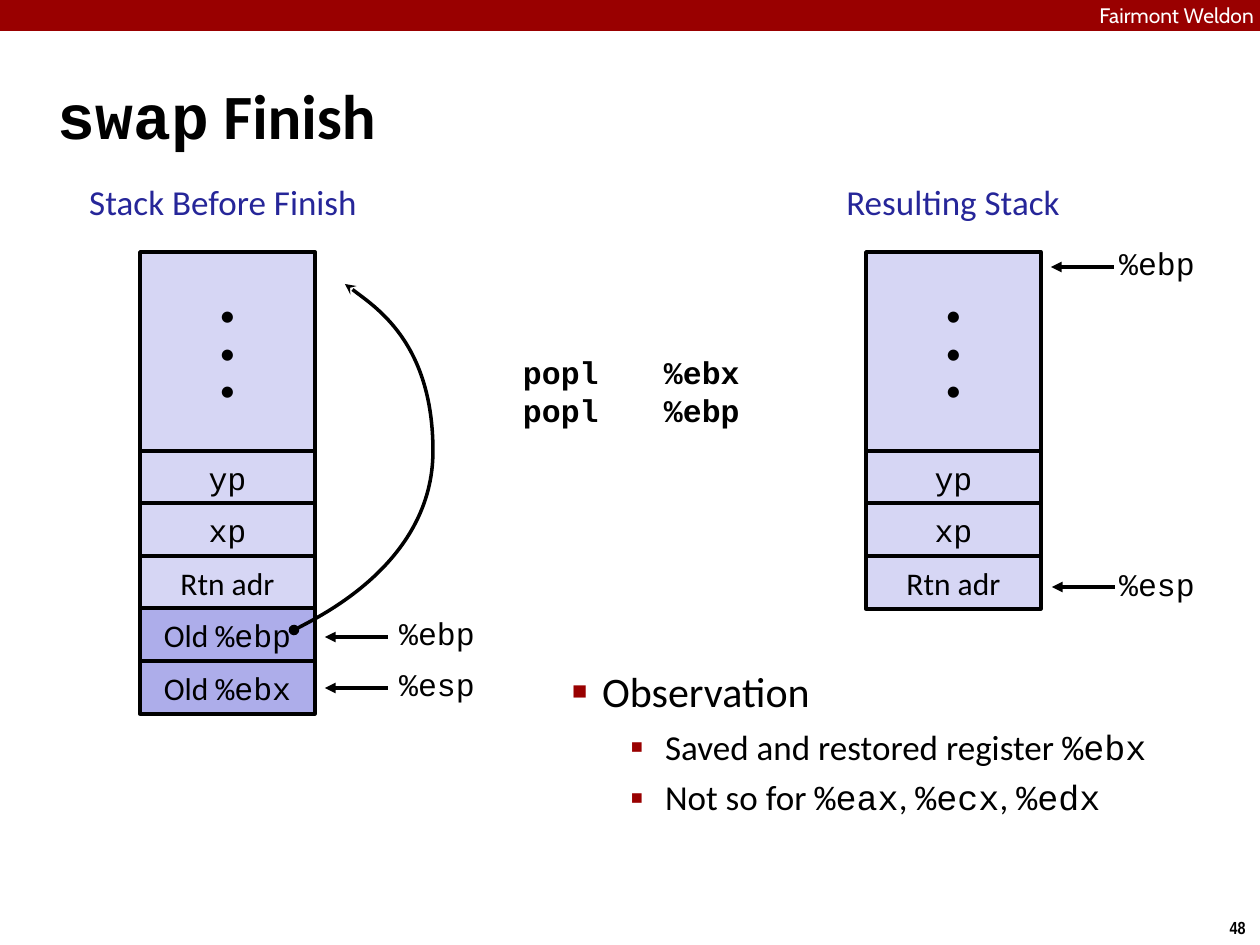
from dataclasses import dataclass

from lxml import etree
from pptx import Presentation
from pptx import util as u
from pptx.dml.color import RGBColor
from pptx.enum import shapes, text
from pptx.oxml.ns import qn

PX = 914400 / 126
SANS, MONO = "Calibri", "Courier New"
BLACK, WHITE, RED, BLUE = "000000", "FFFFFF", "990000", "262699"
LIGHT, DARK = "D6D6F4", "ADADEA"
LEFT, CENTER, RIGHT = text.PP_ALIGN.LEFT, text.PP_ALIGN.CENTER, text.PP_ALIGN.RIGHT


@dataclass(frozen=True)
class Box:
    left: int
    top: int
    width: int
    height: int

    def emu(self) -> list[int]:
        return [px(n) for n in (self.left, self.top, self.width, self.height)]


@dataclass(frozen=True)
class Style:
    size: int = 18
    color: str = BLACK
    bold: bool = False
    align: int = LEFT
    font: str = SANS


@dataclass(frozen=True)
class Pointer:
    tip: int
    y: int
    label_left: int
    label_top: int
    register: str


@dataclass(frozen=True)
class Bullet:
    wording: str
    level: int
    char: str
    percent: int
    size: int
    margin: int
    hang: int
    before: int


CELL = Style(align=CENTER)
STACK_TOP, ROWS_TOP, STACK_WIDTH, ROW_HEIGHT = 252, 451, 175, 53
ARGUMENTS = [("`yp`", LIGHT), ("`xp`", LIGHT), ("Rtn adr", LIGHT)]
SAVED = [("Old `%ebp`", DARK), ("Old `%ebx`", DARK)]
STACKS = [(140, ARGUMENTS + SAVED), (866, ARGUMENTS)]
HEADINGS = [
    ("Stack Before Finish", Box(80, 176, 286, 53)),
    ("Resulting Stack", Box(811, 176, 284, 53)),
]
POINTERS = [
    Pointer(325, 637, 399, 614, "%ebp"),
    Pointer(325, 688, 399, 665, "%esp"),
    Pointer(1051, 267, 1119, 244, "%ebp"),
    Pointer(1052, 587, 1119, 565, "%esp"),
]
BULLETS = [
    Bullet("Observation", 0, "■", 60, 24, 30, -30, 6),
    Bullet("Saved and restored register `%ebx`", 1, "▪", 110, 20, 93, -35, 5),
    Bullet("Not so for `%eax`, `%ecx`, `%edx`", 1, "▪", 110, 20, 93, -35, 5),
]


def px(length: float) -> int:
    return round(length * PX)


def rgb(color: str) -> RGBColor:
    return RGBColor.from_string(color)


def add_xml(parent, tag: str, **attributes):
    return etree.SubElement(parent, qn(tag), {k: str(v) for k, v in attributes.items()})


def write_para(para, wording: str, style: Style) -> None:
    """Fill a paragraph; parts between backticks are monospaced."""
    para.alignment = style.align
    for index, part in enumerate(wording.split("`")):
        if part:
            span = para.add_run()
            span.text = part
            span.font.name = MONO if index % 2 else style.font
            span.font.size = u.Pt(style.size)
            span.font.bold = style.bold
            span.font.color.rgb = rgb(style.color)


def write_frame(frame, lines: list[str], style: Style, inset: int = 0,
                wrap: bool = True, anchor=text.MSO_ANCHOR.TOP) -> None:
    frame.word_wrap = wrap
    frame.auto_size = text.MSO_AUTO_SIZE.NONE
    frame.vertical_anchor = anchor
    frame.margin_left = frame.margin_right = px(inset)
    frame.margin_top = frame.margin_bottom = px(inset)
    for index, line in enumerate(lines):
        para = frame.add_paragraph() if index else frame.paragraphs[0]
        write_para(para, line, style)


def add_label(page, box: Box, lines: list[str], style: Style, inset: int = 0,
              wrap: bool = True):
    label = page.shapes.add_textbox(*box.emu())
    write_frame(label.text_frame, lines, style, inset, wrap)
    return label


def add_rect(page, box: Box, fill: str):
    rect = page.shapes.add_shape(shapes.MSO_SHAPE.RECTANGLE, *box.emu())
    rect.shadow.inherit = False
    rect.fill.solid()
    rect.fill.fore_color.rgb = rgb(fill)
    rect.line.fill.background()
    return rect


def set_line(shape, **ends: str) -> None:
    """Apply the black outline, with headEnd and tailEnd types if given."""
    shape.line.color.rgb = rgb(BLACK)
    shape.line.width = u.Pt(2)
    for end, kind in ends.items():
        add_xml(shape.line._get_or_add_ln(), f"a:{end}", type=kind)


def add_cell(page, box: Box, lines: list[str], fill: str) -> None:
    cell = add_rect(page, box, fill)
    set_line(cell)
    write_frame(cell.text_frame, lines, CELL, anchor=text.MSO_ANCHOR.MIDDLE)


def add_stack(page, left: int, rows: list[tuple[str, str]]) -> None:
    top_cell = Box(left, STACK_TOP, STACK_WIDTH, ROWS_TOP - STACK_TOP)
    add_cell(page, top_cell, ["•"] * 3, LIGHT)
    for index, (wording, fill) in enumerate(rows):
        top = ROWS_TOP + index * 105 // 2
        add_cell(page, Box(left, top, STACK_WIDTH, ROW_HEIGHT), [wording], fill)


def add_pointer(page, pointer: Pointer) -> None:
    arrow = page.shapes.add_connector(
        shapes.MSO_CONNECTOR.STRAIGHT, px(pointer.tip + 63), px(pointer.y),
        px(pointer.tip), px(pointer.y))
    set_line(arrow, tailEnd="triangle")
    add_xml(arrow._element.spPr, "a:effectLst")
    box = Box(pointer.label_left, pointer.label_top, 76, 45)
    add_label(page, box, [f"`{pointer.register}`"], CELL, wrap=False)


def add_curve(page, start: tuple[int, int], controls: list[tuple[int, int]]) -> None:
    """Draw an arrow of cubic curves, three control points to each."""
    builder = page.shapes.build_freeform(*start, scale=PX)
    builder.add_line_segments(controls, close=False)
    curve = builder.convert_to_shape()
    curve.shadow.inherit = False
    curve.fill.background()
    set_line(curve, headEnd="oval", tailEnd="stealth")
    path = next(curve._element.iter(qn("a:path")))
    segments = path.findall(qn("a:lnTo"))
    for index, segment in enumerate(segments):
        if index % 3 == 0:
            cubic = add_xml(path, "a:cubicBezTo")
        cubic.append(segment[0])
        path.remove(segment)


def add_bullets(page, box: Box) -> None:
    frame = add_label(page, box, [], Style(), inset=5).text_frame
    for index, bullet in enumerate(BULLETS):
        para = frame.add_paragraph() if index else frame.paragraphs[0]
        write_para(para, bullet.wording, Style(bullet.size))
        para.level = bullet.level
        para.space_before = u.Pt(bullet.before)
        props = para._p.get_or_add_pPr()
        props.set("marL", str(px(bullet.margin)))
        props.set("indent", str(px(bullet.hang)))
        add_xml(add_xml(props, "a:buClr"), "a:srgbClr", val=RED)
        add_xml(props, "a:buSzPct", val=bullet.percent * 1000)
        add_xml(props, "a:buFont", typeface="Arial")
        add_xml(props, "a:buChar", char=bullet.char)


def add_code(page, box: Box, lines: list[str], stops: list[int]) -> None:
    code = add_label(page, box, lines, Style(bold=True, font=MONO))
    for para in code.text_frame.paragraphs:
        tabs = add_xml(para._p.get_or_add_pPr(), "a:tabLst")
        for stop in stops:
            add_xml(tabs, "a:tab", pos=px(stop), algn="l")


def main() -> None:
    deck = Presentation()
    deck.slide_width, deck.slide_height = px(1260), px(945)
    page = deck.slides.add_slide(deck.slide_layouts[5])

    title = page.shapes.title
    title.left, title.top, title.width, title.height = Box(53, 35, 1155, 158).emu()
    write_frame(title.text_frame, ["`swap` Finish"], Style(36, bold=True), inset=5,
                anchor=text.MSO_ANCHOR.MIDDLE)

    add_rect(page, Box(0, 0, 1261, 31), RED)
    add_label(page, Box(1073, 3, 181, 24), ["Fairmont Weldon"],
              Style(12, WHITE, align=RIGHT, font="Cabin"))
    for wording, box in HEADINGS:
        add_label(page, box, [wording], Style(20, BLUE, align=CENTER), inset=5)
    add_code(page, Box(460, 353, 432, 150), ["\tpopl\t%ebx", "\tpopl\t%ebp"], [63, 204])
    for left, rows in STACKS:
        add_stack(page, left, rows)
    for pointer in POINTERS:
        add_pointer(page, pointer)
    add_curve(page, (294, 630), [(294, 630), (433, 562), (433, 451),
                                 (433, 341), (345, 284), (345, 284)])
    add_bullets(page, Box(567, 661, 662, 203))
    add_label(page, Box(1216, 911, 43, 34), ["48"],
              Style(10, bold=True, align=CENTER, font="Arial Narrow"), inset=6, wrap=False)
    deck.save("out.pptx")


if __name__ == "__main__":
    main()
